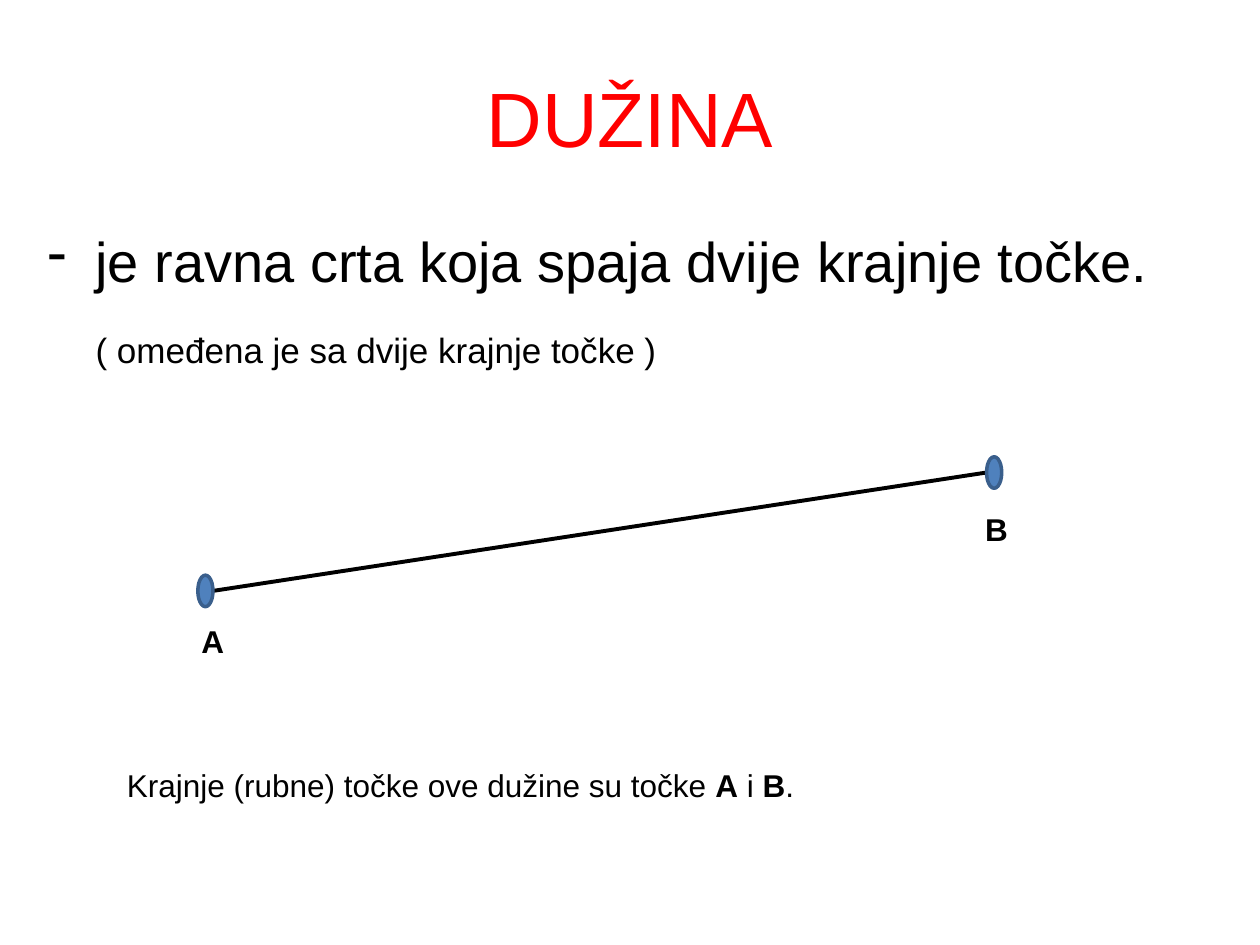
from lxml import etree
from pptx import Presentation
from pptx.dml.color import RGBColor
from pptx.enum.shapes import MSO_CONNECTOR as Line, MSO_SHAPE as Shape
from pptx.enum.text import MSO_ANCHOR as Anchor, PP_ALIGN as Align
from pptx.oxml.ns import qn
from pptx.util import Inches, Pt


def color(hex_code):
    return RGBColor.from_string(hex_code)


class SlideBuilder:
    FONT = "Arial"
    INK, RED = "000000", "FF0000"
    POINT_FILL, POINT_LINE = "4F81BD", "3A5F8C"
    POINT_WIDTH, POINT_HEIGHT = 0.12, 0.25

    def __init__(self, slide):
        self.slide = slide

    def text_box(self, left, top, width, height, wrap=True, anchor=Anchor.TOP):
        box = self.slide.shapes.add_textbox(
            Inches(left), Inches(top), Inches(width), Inches(height))
        frame = box.text_frame
        frame.word_wrap = wrap
        frame.vertical_anchor = anchor
        return frame

    def add_spans(self, para, *spans, size=18, ink=INK):
        """Each span is a pair: text, bold."""
        for text, bold in spans:
            span = para.add_run()
            span.text = text
            font = span.font
            font.name, font.size, font.bold = self.FONT, Pt(size), bold
            font.color.rgb = color(ink)

    def indent(self, para, margin, bullet=None):
        props = para._p.get_or_add_pPr()
        props.set("marL", str(Inches(margin)))
        props.set("indent", str(-Inches(margin) if bullet else 0))
        if bullet:
            etree.SubElement(props, qn("a:buChar")).set("char", bullet)

    def point(self, left, middle):
        dot = self.slide.shapes.add_shape(
            Shape.FLOWCHART_CONNECTOR,
            Inches(left), Inches(middle - self.POINT_HEIGHT / 2),
            Inches(self.POINT_WIDTH), Inches(self.POINT_HEIGHT))
        dot.shadow.inherit = False
        dot.fill.solid()
        dot.fill.fore_color.rgb = color(self.POINT_FILL)
        dot.line.color.rgb = color(self.POINT_LINE)
        dot.line.width = Pt(2)

    def segment(self, start, end):
        line = self.slide.shapes.add_connector(
            Line.STRAIGHT, *(Inches(value) for value in start + end))
        line.line.color.rgb = color(self.INK)
        line.line.width = Pt(2.25)
        etree.SubElement(line._element.spPr, qn("a:effectLst"))


def main():
    deck = Presentation()
    deck.slide_width, deck.slide_height = Inches(10), Inches(7.5)
    page = SlideBuilder(deck.slides.add_slide(deck.slide_layouts[6]))

    # Title
    title = page.text_box(0.5, 0.3, 9, 1.25, anchor=Anchor.MIDDLE).paragraphs[0]
    title.alignment = Align.CENTER
    page.add_spans(title, ("DUŽINA", False), size=44, ink=page.RED)

    # Definition
    body = page.text_box(0.28, 1.75, 9.22, 4.95)
    definition = body.paragraphs[0]
    definition.space_before = Pt(3.6)
    page.indent(definition, 0.38, bullet="-")
    page.add_spans(definition, ("je ravna crta koja spaja dvije krajnje točke.", False), size=32)
    remark = body.add_paragraph()
    remark.space_before = Pt(20)
    page.indent(remark, 0.38)
    page.add_spans(remark, ("( omeđena je sa dvije krajnje točke )", False), size=20)

    # Line segment between its end points
    left_a, middle_a = 1.57, 4.69
    left_b, middle_b = 7.83, 3.75
    page.segment((left_a + page.POINT_WIDTH, middle_a), (left_b, middle_b))
    page.point(left_a, middle_a)
    page.point(left_b, middle_b)

    # Point labels
    for name, left, top, width in (("A", 1.5, 4.89, 0.38), ("B", 7.72, 4, 0.36)):
        label = page.text_box(left, top, width, 0.4, wrap=False)
        page.add_spans(label.paragraphs[0], (name, True))

    # Conclusion
    conclusion = page.text_box(0.91, 6.03, 8.43, 0.4).paragraphs[0]
    page.add_spans(conclusion, ("Krajnje (rubne) točke ove dužine su točke ", False),
                   ("A", True), (" i ", False), ("B", True), (".", False))

    deck.save("out.pptx")


if __name__ == "__main__":
    main()
